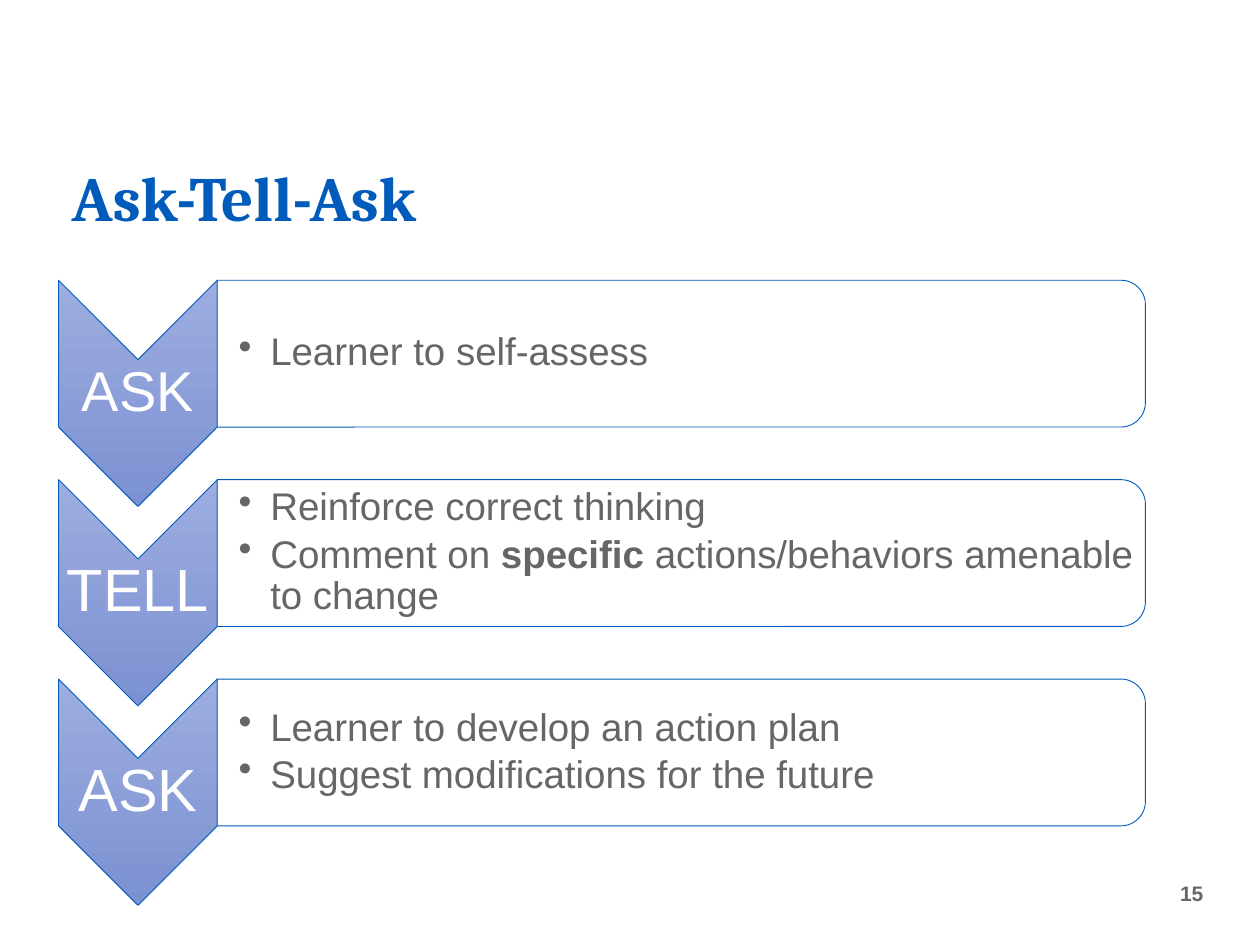
from dataclasses import dataclass

from lxml.etree import SubElement
from pptx import Presentation
from pptx.dml.color import RGBColor
from pptx.enum.shapes import MSO_SHAPE
from pptx.enum.text import MSO_ANCHOR, PP_ALIGN
from pptx.oxml.ns import qn
from pptx.util import Cm, Pt

BLUE, GRAY, WHITE = "005BBB", "666666", "FFFFFF"
CHEVRON_LEFT, CHEVRON_WIDTH, CHEVRON_HEIGHT = 1.18, 3.2, 4.56
PANEL_LEFT = CHEVRON_LEFT + CHEVRON_WIDTH
PANEL_WIDTH, PANEL_HEIGHT = 18.71, 2.96
FIRST_TOP, STEP_PITCH = 5.65, 4.02


@dataclass
class Step:
    label: str
    label_size: int
    bullets: list[list[tuple[str, bool]]]  # each bullet is a list of (text, bold)


STEPS = [
    Step("ASK", 32, [[("Learner to self-assess", False)]]),
    Step("TELL", 34, [
        [("Reinforce correct thinking", False)],
        [("Comment on ", False), ("specific ", True),
         ("actions/behaviors amenable to change", False)],
    ]),
    Step("ASK", 34, [
        [("Learner to develop an action plan", False)],
        [("Suggest modifications for the future", False)],
    ]),
]


def color(value: str) -> RGBColor:
    return RGBColor.from_string(value)


def add_span(para, text: str, *, size: float, fill: str, bold: bool = False,
             font: str = "Arial") -> None:
    span = para.add_run()
    span.text = text
    span.font.name = font
    span.font.size = Pt(size)
    span.font.bold = bold
    span.font.color.rgb = color(fill)


def add_text_frame(page, left: float, top: float, width: float, height: float,
                   inset: float = 0.05, inset_left: float = 0.05):
    """Add a wrapped, vertically centred text box and return its frame."""
    box = page.shapes.add_textbox(Cm(left), Cm(top), Cm(width), Cm(height))
    frame = box.text_frame
    frame.word_wrap = True
    frame.vertical_anchor = MSO_ANCHOR.MIDDLE
    frame.margin_left = Cm(inset_left)
    frame.margin_top = frame.margin_right = frame.margin_bottom = Cm(inset)
    return frame


def add_turned_shape(page, kind: MSO_SHAPE, left: float, top: float,
                     width: float, height: float):
    """Add a shape turned by 90 degrees that covers the given area."""
    shift = (width - height) / 2
    shape = page.shapes.add_shape(kind, Cm(left + shift), Cm(top - shift),
                                  Cm(height), Cm(width))
    shape.rotation = 90
    shape.shadow.inherit = False
    shape.line.color.rgb = color(BLUE)
    shape.line.width = Pt(0.5)
    return shape


def add_chevron(page, step: Step, top: float) -> None:
    chevron = add_turned_shape(page, MSO_SHAPE.CHEVRON, CHEVRON_LEFT, top,
                               CHEVRON_WIDTH, CHEVRON_HEIGHT)
    chevron.fill.gradient()
    chevron.fill.gradient_angle = 0
    for stop, value in zip(chevron.fill.gradient_stops, ("9DADE0", "7C91D1")):
        stop.color.rgb = color(value)

    frame = add_text_frame(page, CHEVRON_LEFT, top + 1.59, CHEVRON_WIDTH, 1.37)
    para = frame.paragraphs[0]
    para.alignment = PP_ALIGN.CENTER
    para.line_spacing = 0.9
    add_span(para, step.label, size=step.label_size, fill=WHITE)


def add_panel(page, step: Step, top: float) -> None:
    panel = add_turned_shape(page, MSO_SHAPE.ROUND_2_SAME_RECTANGLE, PANEL_LEFT,
                             top, PANEL_WIDTH, PANEL_HEIGHT)
    panel.fill.solid()
    panel.fill.fore_color.rgb = color(WHITE)
    fill_color = panel.element.spPr.find(qn("a:solidFill")).find(qn("a:srgbClr"))
    SubElement(fill_color, qn("a:alpha"), val="90000")

    frame = add_text_frame(page, PANEL_LEFT, top + 0.14, 18.57, 2.67, inset_left=0.43)
    for index, bullet in enumerate(step.bullets):
        para = frame.add_paragraph() if index else frame.paragraphs[0]
        para.line_spacing = 0.9
        para.space_after = Pt(3.3)
        properties = para._p.get_or_add_pPr()
        properties.set("marL", str(Cm(0.64)))
        properties.set("indent", str(-Cm(0.64)))
        SubElement(properties, qn("a:buChar"), char="•")
        for text, bold in bullet:
            add_span(para, text, size=22, fill=GRAY, bold=bold)


def add_title(page, text: str) -> None:
    title = page.shapes.title
    title.left, title.top, title.width, title.height = Cm(1.19), Cm(2.46), Cm(21.9), Cm(2.41)
    title.text_frame.vertical_anchor = MSO_ANCHOR.BOTTOM
    para = title.text_frame.paragraphs[0]
    para.alignment = PP_ALIGN.LEFT
    para.line_spacing = 0.9
    add_span(para, text, size=36, fill=BLUE, bold=True, font="Cambria")


def add_page_number(page, number: int) -> None:
    frame = add_text_frame(page, 23.01, 17.27, 1.5, 1.47, inset=0.25)
    para = frame.paragraphs[0]
    para.alignment = PP_ALIGN.RIGHT
    add_span(para, str(number), size=12, fill=GRAY, bold=True)


def main() -> None:
    deck = Presentation()
    deck.slide_width, deck.slide_height = Cm(25.4), Cm(19.05)
    page = deck.slides.add_slide(deck.slide_layouts.get_by_name("Title Only"))
    add_title(page, "Ask-Tell-Ask")
    for index, step in enumerate(STEPS):
        top = FIRST_TOP + index * STEP_PITCH
        add_chevron(page, step, top)
        add_panel(page, step, top)
    add_page_number(page, 15)
    deck.save("out.pptx")


if __name__ == "__main__":
    main()
